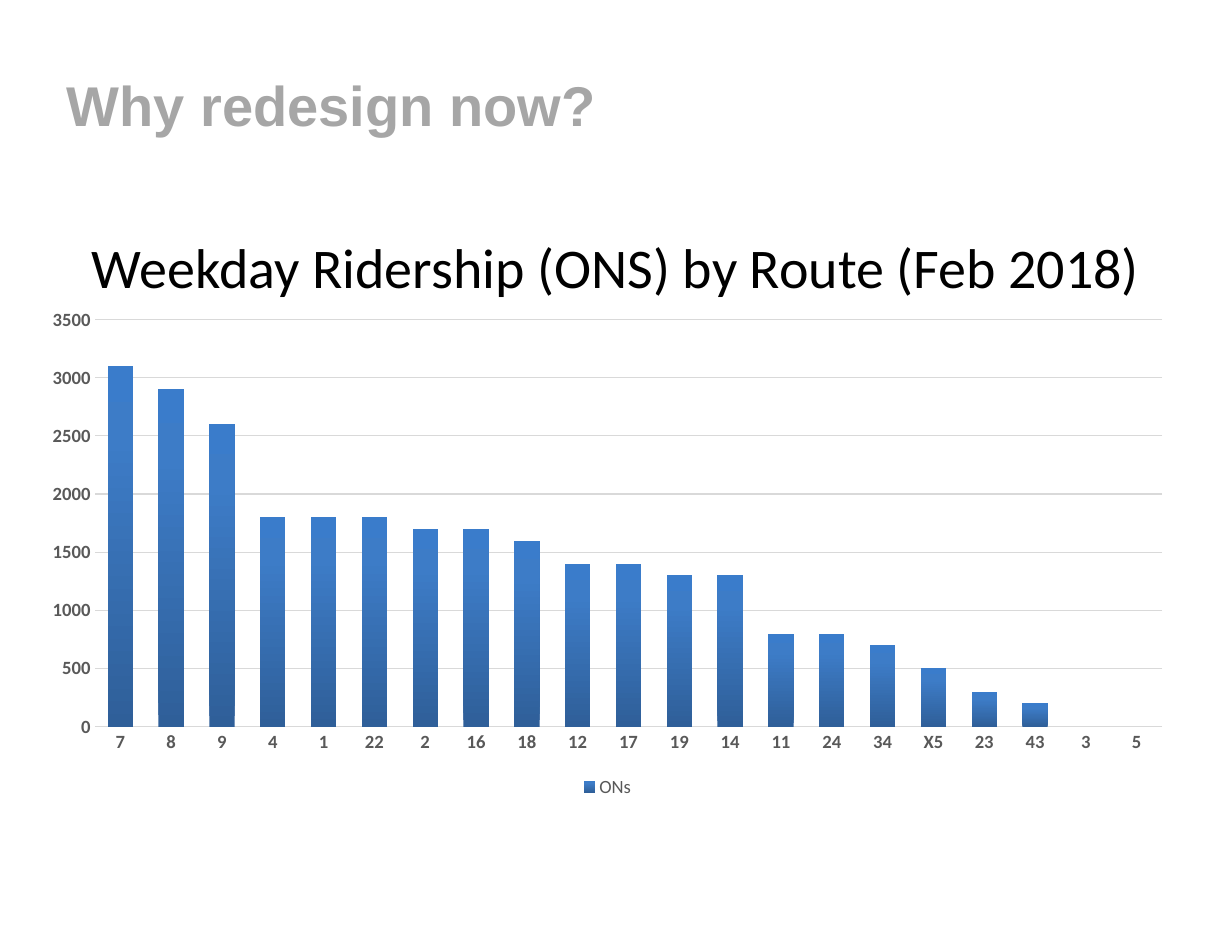
import copy

import pptx
import pptx.chart.data
import pptx.dml.color
import pptx.enum.chart
import pptx.enum.text
import pptx.util
from pptx.util import Cm

BLACK = pptx.dml.color.RGBColor(0x00, 0x00, 0x00)
HEADING_GREY = pptx.dml.color.RGBColor(0xA6, 0xA6, 0xA6)
LABEL_GREY = pptx.dml.color.RGBColor(0x59, 0x59, 0x59)
LINE_GREY = pptx.dml.color.RGBColor(0xD9, 0xD9, 0xD9)
BAR_GRADIENT = [
    (0, pptx.dml.color.RGBColor(0x2F, 0x5F, 0x99)),
    (0.8, pptx.dml.color.RGBColor(0x3D, 0x7C, 0xC7)),
    (1, pptx.dml.color.RGBColor(0x3A, 0x7C, 0xCB)),
]

RIDERSHIP = {
    "7": 3100, "8": 2900, "9": 2600, "4": 1800, "1": 1800, "22": 1800, "2": 1700,
    "16": 1700, "18": 1600, "12": 1400, "17": 1400, "19": 1300, "14": 1300,
    "11": 800, "24": 800, "34": 700, "X5": 500, "23": 300, "43": 200,
    "3": 0, "5": 0,
}


def set_font(font, name, size, color, bold=False):
    font.name = name
    font.size = pptx.util.Pt(size)
    font.color.rgb = color
    font.bold = bold


def add_heading(slide, text, box, font_name, color, bold=False, alignment=None):
    shape = slide.shapes.add_textbox(*box)
    text_frame = shape.text_frame
    text_frame.word_wrap = True
    text_frame.vertical_anchor = pptx.enum.text.MSO_ANCHOR.MIDDLE
    text_frame.text = text
    paragraph = text_frame.paragraphs[0]
    paragraph.alignment = alignment
    set_font(paragraph.runs[0].font, font_name, 36, color, bold)


def style_bars(series):
    """Fill the bars with a gradient that runs from bottom to top."""
    fill = series.format.fill
    fill.gradient()
    fill.gradient_angle = 90
    stop_list = series._element.xpath(".//a:gsLst")[0]
    stop_list.append(copy.deepcopy(stop_list[-1]))
    for stop, (position, color) in zip(fill.gradient_stops, BAR_GRADIENT):
        stop.position = position
        stop.color.rgb = color


def style_axis(axis):
    axis.major_tick_mark = pptx.enum.chart.XL_TICK_MARK.NONE
    axis.minor_tick_mark = pptx.enum.chart.XL_TICK_MARK.NONE
    set_font(axis.tick_labels.font, "Calibri", 12, LABEL_GREY, bold=True)


def style_line(line, width):
    line.color.rgb = LINE_GREY
    line.width = pptx.util.Pt(width)


def add_ridership_chart(slide, box):
    chart_data = pptx.chart.data.CategoryChartData()
    chart_data.categories = list(RIDERSHIP)
    chart_data.add_series("ONs", list(RIDERSHIP.values()))
    chart = slide.shapes.add_chart(
        pptx.enum.chart.XL_CHART_TYPE.COLUMN_CLUSTERED, *box, chart_data
    ).chart
    set_font(chart.font, "Calibri", 10, BLACK)
    chart.has_title = False

    plot = chart.plots[0]
    plot.gap_width = 100
    plot.overlap = -24
    plot.vary_by_categories = False
    style_bars(plot.series[0])

    style_axis(chart.category_axis)
    style_line(chart.category_axis.format.line, 1)

    value_axis = chart.value_axis
    style_axis(value_axis)
    value_axis.minimum_scale = 0
    value_axis.maximum_scale = 3500
    value_axis.major_unit = 500
    value_axis.format.line.fill.background()
    style_line(value_axis.major_gridlines.format.line, 0.75)

    chart.has_legend = True
    chart.legend.position = pptx.enum.chart.XL_LEGEND_POSITION.BOTTOM
    chart.legend.include_in_layout = False
    set_font(chart.legend.font, "Calibri", 12, LABEL_GREY)


def main():
    presentation = pptx.Presentation()
    presentation.slide_width = Cm(27.94)
    presentation.slide_height = Cm(21.59)
    slide = presentation.slides.add_slide(presentation.slide_layouts[6])

    add_heading(slide, "Why redesign now?", (Cm(1.27), Cm(1.51), Cm(22.66), Cm(1.7)),
                "Arial", HEADING_GREY, bold=True)
    add_heading(slide, "Weekday Ridership (ONS) by Route (Feb 2018)",
                (Cm(1.39), Cm(4.24), Cm(25.15), Cm(3.61)), "Calibri", BLACK,
                alignment=pptx.enum.text.PP_ALIGN.CENTER)
    add_ridership_chart(slide, (Cm(0.67), Cm(6.77), Cm(26.21), Cm(11.43)))

    presentation.save("out.pptx")


if __name__ == "__main__":
    main()
